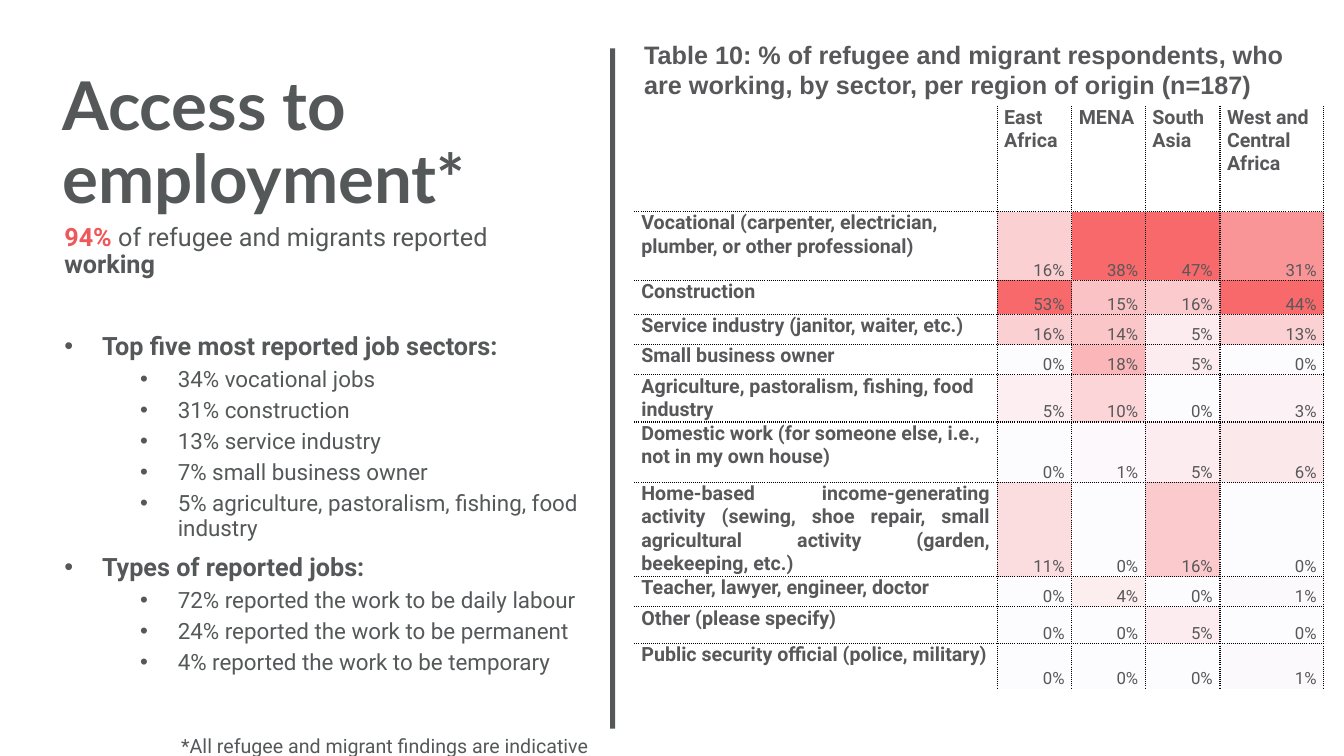
from dataclasses import dataclass

from lxml import etree
from pptx import Presentation
from pptx.dml.color import RGBColor
from pptx.enum.shapes import MSO_SHAPE
from pptx.enum.text import MSO_ANCHOR, PP_ALIGN
from pptx.oxml.ns import qn
from pptx.util import Emu, Inches, Pt

RECTANGLE = MSO_SHAPE.RECTANGLE
TOP, BOTTOM = MSO_ANCHOR.TOP, MSO_ANCHOR.BOTTOM
LEFT, RIGHT, JUSTIFY = PP_ALIGN.LEFT, PP_ALIGN.RIGHT, PP_ALIGN.JUSTIFY

SLIDE_WIDTH, SLIDE_HEIGHT = Inches(13.33), Inches(7.5)
GREY = RGBColor(0x55, 0x58, 0x59)
TABLE_GREY = RGBColor(0x58, 0x58, 0x5A)
ACCENT = RGBColor(0xEF, 0x58, 0x59)
WHITE = RGBColor(0xFF, 0xFF, 0xFF)
BLACK = RGBColor(0x00, 0x00, 0x00)
HEAT_LOW = RGBColor(0xFC, 0xFC, 0xFF)
HEAT_HIGH = RGBColor(0xF8, 0x69, 0x6B)


@dataclass(frozen=True)
class Frame:
    """A place on the slide, in percent of its width and height."""
    left: float
    top: float
    width: float
    height: float


@dataclass(frozen=True)
class Sector:
    label: str
    shares: tuple[int, ...]
    height: float
    align: PP_ALIGN = LEFT


@dataclass(frozen=True)
class JobList:
    heading: str
    items: tuple[str, ...]
    space_before: float


DIVIDER = Frame(45.39, 6.4, 0.38, 90)
TITLE = Frame(3.9, 8.93, 41.64, 8.53)
FINDINGS = Frame(4.05, 29.07, 39.98, 65.73)
CAPTION = Frame(47.19, 4.53, 50.04, 9.47)
TABLE = Frame(47.19, 14, 51.31, 77)
FOOTNOTE = Frame(12.75, 96.4, 68.64, 4.53)

REGIONS = ("East Africa", "MENA", "South Asia", "West and Central Africa")
COLUMN_WIDTHS = (27, 5.55, 5.48, 5.55, 7.73)
HEADER_HEIGHT = 14
CELL_MARGIN = 0.53
HANGING = 2.81
ITEM_INDENT = 8.44

SECTORS = (
    Sector("Vocational (carpenter, electrician, plumber, or other professional)", (16, 38, 47, 31), 9.07),
    Sector("Construction", (53, 15, 16, 44), 4.53),
    Sector("Service industry (janitor, waiter, etc.)", (16, 14, 5, 13), 4),
    Sector("Small business owner", (0, 18, 5, 0), 4),
    Sector("Agriculture, pastoralism, fishing, food industry", (5, 10, 0, 3), 6.13),
    Sector("Domestic work (for someone else, i.e., not in my own house)", (0, 1, 5, 6), 8),
    Sector("Home-based income-generating activity (sewing, shoe repair, small "
           "agricultural activity (garden, beekeeping, etc.)", (11, 0, 16, 0), 12.27, JUSTIFY),
    Sector("Teacher, lawyer, engineer, doctor", (0, 4, 0, 1), 4),
    Sector("Other (please specify)", (0, 0, 5, 0), 4.8),
    Sector("Public security official (police, military)", (0, 0, 0, 1), 6),
)

JOB_LISTS = (
    JobList("Top five most reported job sectors:", (
        "34% vocational jobs",
        "31% construction",
        "13% service industry",
        "7% small business owner",
        "5% agriculture, pastoralism, fishing, food industry",
    ), 39),
    JobList("Types of reported jobs:", (
        "72% reported the work to be daily labour",
        "24% reported the work to be permanent",
        "4% reported the work to be temporary",
    ), 10),
)


def across(percent: float) -> Emu:
    return Emu(round(SLIDE_WIDTH * percent / 100))


def down(percent: float) -> Emu:
    return Emu(round(SLIDE_HEIGHT * percent / 100))


def place(frame: Frame) -> tuple[Emu, Emu, Emu, Emu]:
    return across(frame.left), down(frame.top), across(frame.width), down(frame.height)


def add_span(para, text: str, *, size: float, font: str = "Roboto",
             color: RGBColor = GREY, bold: bool = False) -> None:
    span = para.add_run()
    span.text = text
    span.font.size, span.font.name, span.font.bold = Pt(size), font, bold
    span.font.color.rgb = color


def add_box(page, frame: Frame):
    """Add a wrapping text box and return its text frame."""
    box = page.shapes.add_textbox(*place(frame))
    box.text_frame.word_wrap = True
    return box.text_frame


def add_bullet(body, text: str, *, level: int, indent: float, space_before: float,
               size: float, bold: bool) -> None:
    para = body.add_paragraph()
    para.level = level
    para.line_spacing, para.space_before = 0.9, Pt(space_before)
    properties = para._p.get_or_add_pPr()
    properties.set("marL", str(across(indent)))
    properties.set("indent", str(-across(HANGING)))
    etree.SubElement(properties, qn("a:buFont"), typeface="Arial")
    etree.SubElement(properties, qn("a:buChar"), char="•")
    add_span(para, text, size=size, bold=bold)


def add_findings(page) -> None:
    body = add_box(page, FINDINGS)
    para = body.paragraphs[0]
    para.line_spacing = 0.9
    add_span(para, "94% ", size=18, color=ACCENT, bold=True)
    add_span(para, "of refugee and migrants reported ", size=18)
    add_span(para, "working", size=18, bold=True)
    for jobs in JOB_LISTS:
        add_bullet(body, jobs.heading, level=0, indent=HANGING,
                   space_before=jobs.space_before, size=18, bold=True)
        for item in jobs.items:
            add_bullet(body, item, level=1, indent=ITEM_INDENT, space_before=5, size=16, bold=False)


def heat(share: int, highest: int) -> RGBColor:
    """Blend from the low to the high colour by the share of the column's highest value."""
    return RGBColor(*(round(low + (high - low) * share / highest)
                      for low, high in zip(HEAT_LOW, HEAT_HIGH)))


def set_borders(cell, dotted: dict[str, bool]) -> None:
    properties = cell._tc.get_or_add_tcPr()
    for position, (side, visible) in enumerate(dotted.items()):
        line = etree.Element(qn(f"a:{side}"), w=str(Pt(1)))
        if visible:
            fill = etree.SubElement(line, qn("a:solidFill"))
            etree.SubElement(fill, qn("a:srgbClr"), val=str(BLACK))
            etree.SubElement(line, qn("a:prstDash"), val="sysDot")
        else:
            etree.SubElement(line, qn("a:noFill"))
        properties.insert(position, line)


def fill_cell(cell, text: str, *, fill: RGBColor = WHITE, size: float = 14, bold: bool = True,
              align: PP_ALIGN = LEFT, anchor: MSO_ANCHOR = TOP) -> None:
    cell.fill.solid()
    cell.fill.fore_color.rgb = fill
    cell.margin_left = cell.margin_right = across(CELL_MARGIN)
    cell.margin_top = cell.margin_bottom = 0
    cell.vertical_anchor = anchor
    para = cell.text_frame.paragraphs[0]
    para.alignment = align
    if text:
        add_span(para, text, size=size, color=TABLE_GREY, bold=bold)


def add_sector_table(page) -> None:
    table = page.shapes.add_table(len(SECTORS) + 1, len(COLUMN_WIDTHS), *place(TABLE)).table
    table.first_row = table.horz_banding = False
    for column, width in zip(table.columns, COLUMN_WIDTHS):
        column.width = across(width)
    for row, height in zip(table.rows, (HEADER_HEIGHT, *(sector.height for sector in SECTORS))):
        row.height = down(height)

    for column, heading in enumerate(("", *REGIONS)):
        fill_cell(table.cell(0, column), heading)
    peaks = [max(shares) for shares in zip(*(sector.shares for sector in SECTORS))]
    for row, sector in enumerate(SECTORS, start=1):
        fill_cell(table.cell(row, 0), sector.label, align=sector.align)
        for column, (share, peak) in enumerate(zip(sector.shares, peaks), start=1):
            fill_cell(table.cell(row, column), f"{share}%", fill=heat(share, peak),
                      size=12, bold=False, align=RIGHT, anchor=BOTTOM)

    for row in range(len(table.rows)):
        for column in range(len(table.columns)):
            set_borders(table.cell(row, column), {
                "lnL": column > 0, "lnR": True, "lnT": row > 0, "lnB": row < len(SECTORS)})


def main() -> None:
    deck = Presentation()
    deck.slide_width, deck.slide_height = SLIDE_WIDTH, SLIDE_HEIGHT
    page = deck.slides.add_slide(deck.slide_layouts[6])

    divider = page.shapes.add_shape(RECTANGLE, *place(DIVIDER))
    divider.shadow.inherit = False
    divider.fill.solid()
    divider.fill.fore_color.rgb = GREY
    divider.line.fill.background()

    title = add_box(page, TITLE).paragraphs[0]
    title.line_spacing = 0.9
    add_span(title, "Access to employment*", size=48, font="Lato", bold=True)
    add_findings(page)
    caption = add_box(page, CAPTION).paragraphs[0]
    add_span(caption, "Table 10: % of refugee and migrant respondents, who are working, "
             "by sector, per region of origin (n=187)",
             size=18, font="Arial", color=TABLE_GREY, bold=True)
    add_sector_table(page)
    footnote = add_box(page, FOOTNOTE).paragraphs[0]
    add_span(footnote, "*All refugee and migrant findings are indicative", size=14)

    deck.save("out.pptx")


if __name__ == "__main__":
    main()
